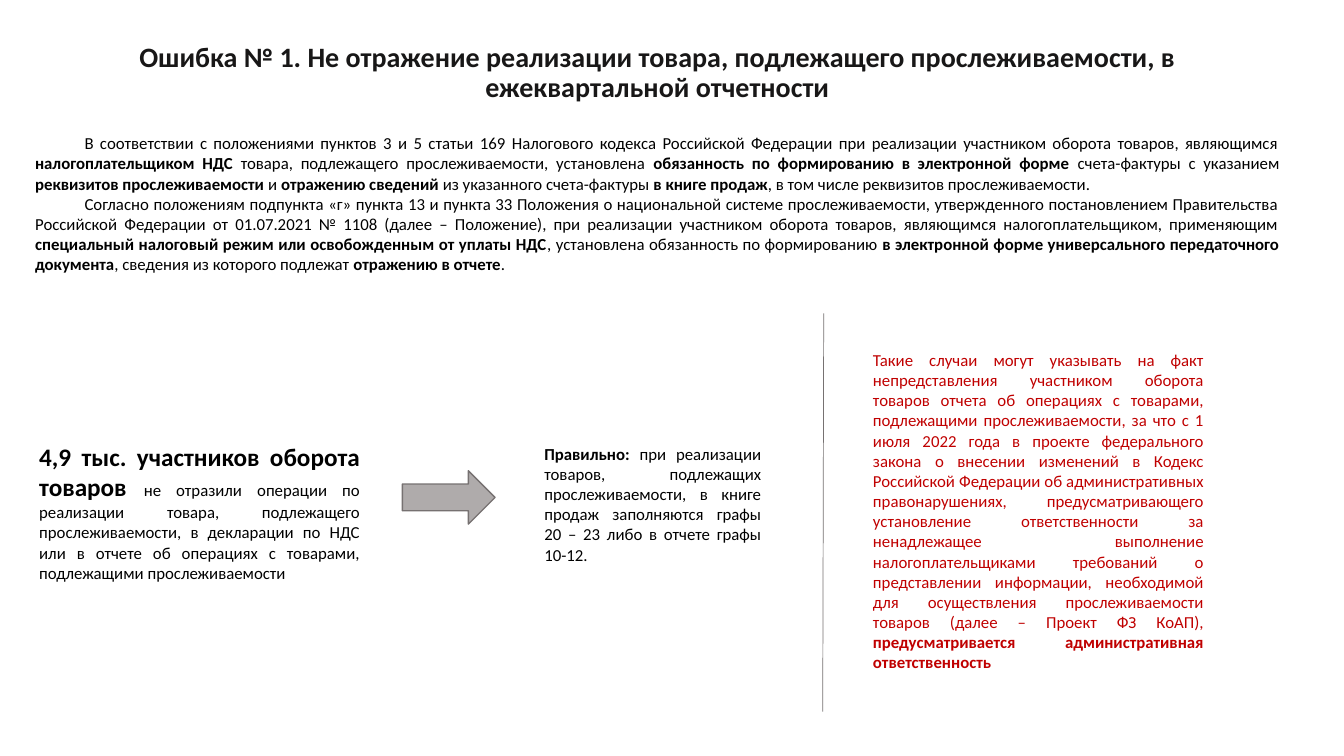
from pptx import Presentation
from pptx.dml.color import RGBColor
from pptx.enum import shapes, text
from pptx.oxml import ns, xmlchemy
from pptx.util import Inches, Pt

INK = RGBColor(0x18, 0x17, 0x17)
BLACK = RGBColor(0, 0, 0)
RED = RGBColor(0xC0, 0, 0)
ARROW_GREY = RGBColor(0xAF, 0xAB, 0xAB)
LINE_GREY = RGBColor(0x76, 0x71, 0x71)


def add_span(para, words, size, bold, color):
    span = para.add_run()
    span.text = words
    span.font.name = "Calibri"
    span.font.size = Pt(size)
    span.font.bold = bold
    span.font.color.rgb = color


deck = Presentation()
deck.slide_width = Inches(13.33)
deck.slide_height = Inches(7.5)
page = deck.slides.add_slide(deck.slide_layouts[5])

# Title
title = page.shapes.title
title.left, title.top = Inches(0.77), Inches(0)
title.width, title.height = Inches(11.5), Inches(1.45)
title.text_frame.vertical_anchor = text.MSO_ANCHOR.MIDDLE
para = title.text_frame.paragraphs[0]
para.alignment = text.PP_ALIGN.CENTER
para.line_spacing = 0.9
add_span(para, "Ошибка № 1. Не отражение реализации товара, подлежащего прослеживаемости, "
         "в ежеквартальной отчетности", 20, True, INK)

# Paragraphs as lists of (words, size, bold)
legal_basis = [
    [
        ("В соответствии с положениями пунктов 3 и 5 статьи 169 Налогового кодекса "
         "Российской Федерации при реализации участником оборота товаров, являющимся ", 12, False),
        ("налогоплательщиком НДС ", 12, True),
        ("товара, подлежащего прослеживаемости, установлена ", 12, False),
        ("обязанность по формированию в электронной форме ", 12, True),
        ("счета-фактуры с указанием ", 12, False),
        ("реквизитов прослеживаемости", 12, True),
        (" и ", 12, False),
        ("отражению сведений ", 12, True),
        ("из указанного счета-фактуры ", 12, False),
        ("в книге продаж", 12, True),
        (", в том числе реквизитов прослеживаемости.", 12, False),
    ],
    [
        ("Согласно положениям подпункта «г» пункта 13 и пункта 33 Положения о национальной "
         "системе прослеживаемости, утвержденного постановлением Правительства Российской "
         "Федерации от 01.07.2021 № 1108 (далее – Положение), при реализации участником оборота "
         "товаров, являющимся налогоплательщиком, применяющим ", 12, False),
        ("специальный налоговый режим или освобожденным от уплаты НДС", 12, True),
        (", установлена обязанность по формированию ", 12, False),
        ("в электронной форме универсального передаточного документа", 12, True),
        (", сведения из которого подлежат ", 12, False),
        ("отражению в отчете", 12, True),
        (".", 12, False),
    ],
]
violation = [[
    ("4,9 тыс. участников оборота товаров ", 18, True),
    ("не отразили операции по реализации товара, подлежащего прослеживаемости, в декларации "
     "по НДС или в отчете об операциях с товарами, подлежащими прослеживаемости", 12, False),
]]
correct_way = [[
    ("Правильно: ", 12, True),
    ("при реализации товаров, подлежащих прослеживаемости, в книге продаж заполняются графы "
     "20 – 23 либо в отчете графы 10-12.", 12, False),
]]
liability = [[
    ("Такие случаи могут указывать на факт непредставления участником оборота товаров отчета "
     "об операциях с товарами, подлежащими прослеживаемости, за что с 1 июля 2022 года в проекте "
     "федерального закона о внесении изменений в Кодекс Российской Федерации об административных "
     "правонарушениях, предусматривающего установление ответственности за ненадлежащее выполнение "
     "налогоплательщиками требований о представлении информации, необходимой для осуществления "
     "прослеживаемости товаров (далее – Проект ФЗ КоАП), ", 12, False),
    ("предусматривается административная ответственность", 12, True),
]]

# Justified text blocks: left, top, width, height, first-line indent, color, paragraphs
blocks = [
    (0.25, 1.27, 12.54, 1.51, 0.49, BLACK, legal_basis),
    (0.29, 4.33, 3.38, 1.51, 0, BLACK, violation),
    (5.3, 4.35, 2.35, 1.31, 0, BLACK, correct_way),
    (8.56, 3.42, 3.48, 3.33, 0, RED, liability),
]
for left, top, width, height, indent, color, paragraphs in blocks:
    box = page.shapes.add_textbox(Inches(left), Inches(top), Inches(width), Inches(height))
    frame = box.text_frame
    frame.word_wrap = True
    frame.auto_size = text.MSO_AUTO_SIZE.SHAPE_TO_FIT_TEXT
    for index, spans in enumerate(paragraphs):
        para = frame.add_paragraph() if index else frame.paragraphs[0]
        para.alignment = text.PP_ALIGN.JUSTIFY
        if indent:
            para._p.get_or_add_pPr().set("indent", str(Inches(indent)))
        for words, size, bold in spans:
            add_span(para, words, size, bold, color)

# Arrow from the violation to the correct way
arrow = page.shapes.add_shape(shapes.MSO_SHAPE.RIGHT_ARROW,
                              Inches(3.99), Inches(4.67), Inches(0.92), Inches(0.53))
arrow.shadow.inherit = False
arrow.fill.solid()
arrow.fill.fore_color.rgb = ARROW_GREY
arrow.line.color.rgb = LINE_GREY
arrow.line.width = Pt(1)

# Divider before the liability note
divider = page.shapes.add_connector(shapes.MSO_CONNECTOR.STRAIGHT,
                                    Inches(8.17), Inches(3.11), Inches(8.16), Inches(7.06))
divider.line.color.rgb = LINE_GREY
divider.line.width = Pt(0.5)
divider._element.spPr.append(xmlchemy.OxmlElement("a:effectLst"))

deck.save("out.pptx")
